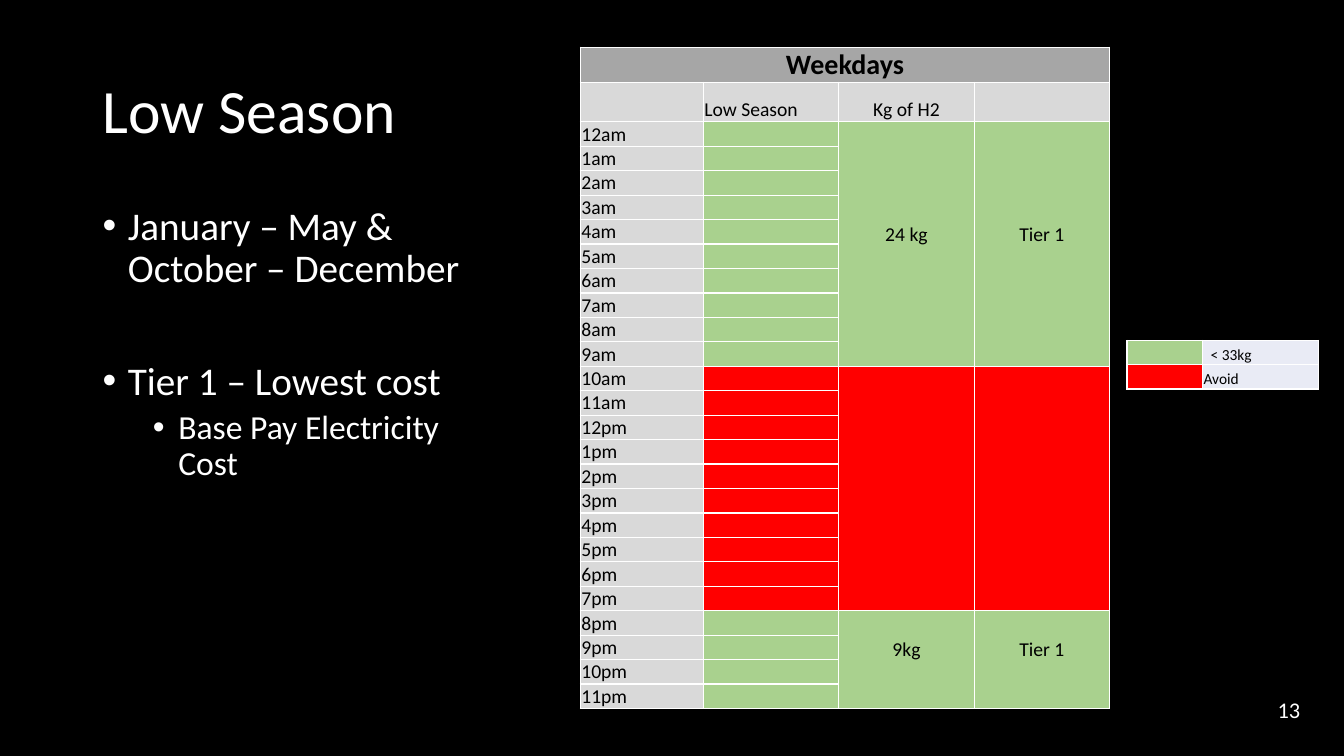
from dataclasses import dataclass

from lxml.etree import SubElement
from pptx import Presentation
from pptx.dml.color import RGBColor
from pptx.enum.text import MSO_ANCHOR, MSO_AUTO_SIZE, PP_ALIGN
from pptx.oxml import parse_xml
from pptx.oxml.ns import nsdecls, qn
from pptx.util import Cm, Pt


@dataclass(frozen=True)
class Theme:
    """Colours and type sizes of the slide."""
    font: str = "Calibri"
    background: str = "000000"
    light_text: str = "FFFFFF"
    dark_text: str = "000000"
    border: str = "FFFFFF"
    heading: str = "A6A6A6"
    label: str = "D9D9D9"
    tier_one: str = "A9D18E"
    avoid: str = "FF0000"
    legend: str = "E9EBF5"
    title_size: int = 44
    body_sizes: tuple = (28, 24)
    number_size: int = 16
    heading_size: int = 20
    table_size: int = 14
    legend_size: int = 11


THEME = Theme()
BULLETS = (
    ("January – May & October – December", 0, 0),
    ("Tier 1 – Lowest cost", 0, 50),
    ("Base Pay Electricity Cost", 1, 5),
)
PERIODS = (
    (10, THEME.tier_one, ("24 kg", "Tier 1")),
    (10, THEME.avoid, ("", "")),
    (4, THEME.tier_one, ("9kg", "Tier 1")),
)
LEGEND = ((THEME.tier_one, "< 33kg", 0.2), (THEME.avoid, "Avoid", 0.02))


def format_runs(paragraph, size, color, bold=False):
    """Format every run of a paragraph."""
    for run in paragraph.runs:
        run.font.name = THEME.font
        run.font.size = Pt(size)
        run.font.bold = bold
        run.font.color.rgb = RGBColor.from_string(color)


def place(shape, left, top, width, height):
    """Move and size a shape, in centimetres."""
    shape.left, shape.top = Cm(left), Cm(top)
    shape.width, shape.height = Cm(width), Cm(height)


def add_title(slide, text):
    """Fill the title placeholder."""
    title = slide.shapes.title
    place(title, 2.33, 1.02, 29.21, 3.68)
    title.text_frame.text = text
    title.text_frame.auto_size = MSO_AUTO_SIZE.NONE
    title.text_frame.vertical_anchor = MSO_ANCHOR.MIDDLE
    paragraph = title.text_frame.paragraphs[0]
    paragraph.alignment = PP_ALIGN.LEFT
    paragraph.line_spacing = 0.9
    format_runs(paragraph, THEME.title_size, THEME.light_text)


def add_bullets(slide, bullets):
    """Fill the body placeholder with a bulleted list."""
    body = slide.placeholders[1]
    place(body, 2.33, 5.08, 10.26, 12.09)
    text_frame = body.text_frame
    text_frame.text = "\n".join(text for text, _, _ in bullets)
    text_frame.auto_size = MSO_AUTO_SIZE.NONE
    for paragraph, (_, level, space) in zip(text_frame.paragraphs, bullets):
        properties = paragraph._p.get_or_add_pPr()
        properties.set("marL", str(Cm(0.64 + 1.27 * level)))
        properties.set("indent", str(Cm(-0.64)))
        SubElement(properties, qn("a:buFont"), typeface="Arial")
        SubElement(properties, qn("a:buChar"), char="•")
        paragraph.level = level
        paragraph.line_spacing = 0.9
        paragraph.space_before = Pt(space)
        format_runs(paragraph, THEME.body_sizes[level], THEME.light_text)


def add_slide_number(slide, text):
    """Add the number in the lower right corner."""
    box = slide.shapes.add_textbox(Cm(25.4), Cm(17.37), Cm(7.62), Cm(1.02))
    box.text_frame.word_wrap = True
    box.text_frame.vertical_anchor = MSO_ANCHOR.MIDDLE
    box.text_frame.text = text
    paragraph = box.text_frame.paragraphs[0]
    paragraph.alignment = PP_ALIGN.RIGHT
    format_runs(paragraph, THEME.number_size, THEME.light_text)


def add_grid(slide, left, top, widths, heights, size):
    """Add a bordered table whose empty cells keep a small type size."""
    table = slide.shapes.add_table(
        len(heights), len(widths), Cm(left), Cm(top), sum(widths), sum(heights)
    ).table
    table.first_row = table.horz_banding = False
    for column, width in zip(table.columns, widths):
        column.width = width
    for row, height in zip(table.rows, heights):
        row.height = height
    for cell in table.iter_cells():
        cell.margin_left = cell.margin_right = Cm(0.02)
        cell.margin_top, cell.margin_bottom = Cm(0.01), Cm(0)
        cell.vertical_anchor = MSO_ANCHOR.BOTTOM
        ending = cell.text_frame.paragraphs[0]._p.get_or_add_endParaRPr()
        ending.set("sz", str(size * 100))
        for position, side in enumerate("LRTB"):
            cell._tc.get_or_add_tcPr().insert(position, parse_xml(
                f'<a:ln{side} {nsdecls("a")} w="12700"><a:solidFill>'
                f'<a:srgbClr val="{THEME.border}"/></a:solidFill></a:ln{side}>'
            ))
    return table


def fill_cell(cell, color, text="", size=THEME.table_size, centred=False, bold=False):
    """Colour a cell and write its text."""
    cell.fill.solid()
    cell.fill.fore_color.rgb = RGBColor.from_string(color)
    if text:
        paragraph = cell.text_frame.paragraphs[0]
        paragraph.text = text
        paragraph.alignment = PP_ALIGN.CENTER if centred else PP_ALIGN.LEFT
        format_runs(paragraph, size, THEME.dark_text, bold)


def hour_name(hour):
    """Name an hour on the twelve-hour clock."""
    return f"{(hour - 1) % 12 + 1}{'am' if hour < 12 else 'pm'}"


def add_schedule(slide):
    """Add the weekday table with its merged periods."""
    header_heights = [Cm(0.88), Cm(1)]
    hour_height = (Cm(16.67) - sum(header_heights)) // 24
    table = add_grid(slide, 14.63, 1.19, [Cm(3.1)] + [Cm(3.41)] * 3,
                     header_heights + [hour_height] * 24, THEME.table_size)
    table.cell(0, 0).merge(table.cell(0, 3))
    fill_cell(table.cell(0, 0), THEME.heading, "Weekdays", THEME.heading_size, True, True)
    for column, text in enumerate(("", "Low Season", "Kg of H2", "")):
        fill_cell(table.cell(1, column), THEME.label, text, centred=column == 2)
    first = 2
    for hours, color, texts in PERIODS:
        for row in range(first, first + hours):
            fill_cell(table.cell(row, 0), THEME.label, hour_name(row - 2))
            fill_cell(table.cell(row, 1), color)
        for column, text in enumerate(texts, start=2):
            cell = table.cell(first, column)
            cell.merge(table.cell(first + hours - 1, column))
            cell.vertical_anchor = MSO_ANCHOR.MIDDLE
            cell.margin_bottom = Cm(0.5)
            fill_cell(cell, color, text, centred=True)
        first += hours


def add_legend(slide):
    """Add the colour key beside the schedule."""
    table = add_grid(slide, 28.4, 8.58, [Cm(1.91), Cm(2.92)],
                     [Cm(0.61)] * len(LEGEND), THEME.legend_size)
    for row, (color, text, margin) in enumerate(LEGEND):
        fill_cell(table.cell(row, 0), color)
        fill_cell(table.cell(row, 1), THEME.legend, text, THEME.legend_size)
        table.cell(row, 1).margin_left = Cm(margin)


def main():
    """Build and save the slide."""
    presentation = Presentation()
    presentation.slide_width, presentation.slide_height = Cm(33.87), Cm(19.05)
    slide = presentation.slides.add_slide(presentation.slide_layouts[1])
    slide.background.fill.solid()
    slide.background.fill.fore_color.rgb = RGBColor.from_string(THEME.background)
    add_title(slide, "Low Season")
    add_bullets(slide, BULLETS)
    add_slide_number(slide, "13")
    add_schedule(slide)
    add_legend(slide)
    presentation.save("out.pptx")


if __name__ == "__main__":
    main()
